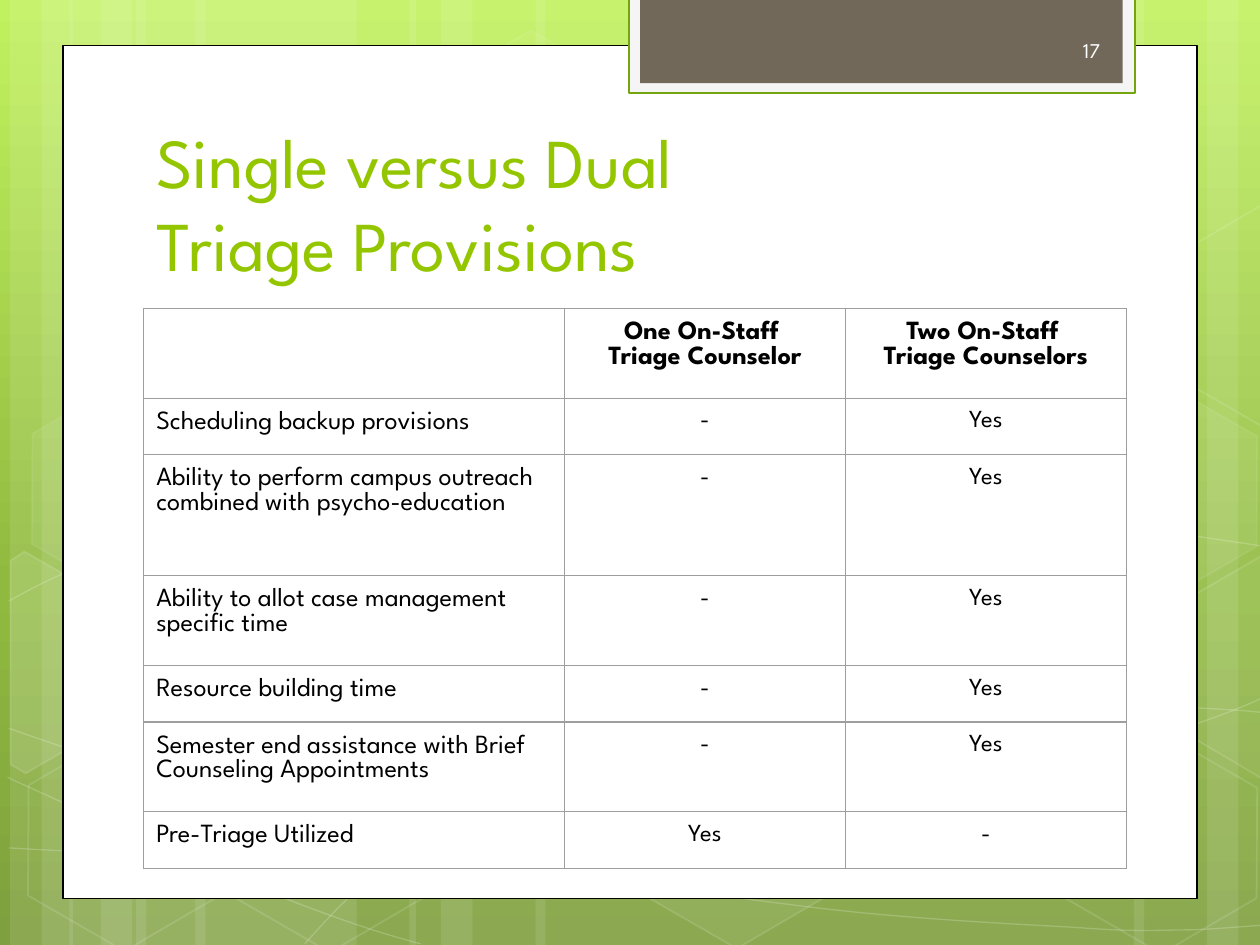
import pptx
import pptx.util
import pptx.dml.color
import pptx.enum.shapes
import pptx.enum.text
import pptx.oxml.ns
import lxml.etree
import copy
import math


class Theme:
    font = "League Spartan"
    sky = [(0, "C1F15E"), (0.62, "90BA3F"), (1, "7FA03E")]
    white, black, lime = "FFFFFF", "000000", "94C600"
    tab, edge, brown, pale = "F5F5F5", "74A50F", "71685A", "FEFEFE"
    grid = "9E9E9E"
    title, head, mark, page = 40, 15, 14, 12


PX = 9144  # 100 px to the inch
RGB = pptx.dml.color.RGBColor.from_string
PT = pptx.util.Pt
QN = pptx.oxml.ns.qn
KIND = pptx.enum.shapes.MSO_SHAPE
ALIGN = pptx.enum.text.PP_ALIGN
ANCHOR = pptx.enum.text.MSO_ANCHOR


def paint(shape, fill=None, line=None, width=1, alphas=()):
    """Fill and outline a shape; alphas are percents for fill, then line."""
    shape.shadow.inherit = False
    if fill:
        shape.fill.solid()
        shape.fill.fore_color.rgb = RGB(fill)
    else:
        shape.fill.background()
    if line:
        shape.line.color.rgb = RGB(line)
        shape.line.width = PT(width)
    else:
        shape.line.fill.background()
    for tint, part in zip(shape.element.spPr.iter(QN("a:srgbClr")), alphas):
        lxml.etree.SubElement(tint, QN("a:alpha"), val=str(part * 1000))


def write(frame, text, size, color, align=ALIGN.LEFT, bold=False):
    frame.text = text
    for para in frame.paragraphs:
        para.alignment = align
        para.font.name = Theme.font
        para.font.size = PT(size)
        para.font.bold = bold
        para.font.color.rgb = RGB(color)


deck = pptx.Presentation()
deck.slide_width, deck.slide_height = 1000 * PX, 750 * PX
slide = deck.slides.add_slide(deck.slide_layouts[5])
shapes = slide.shapes

# Background gradient, top to bottom
back = slide.background.fill
back.gradient()
back.gradient_angle = 270
ramp = next(slide.element.iter(QN("a:gsLst")))
ramp.append(copy.deepcopy(ramp[-1]))
for stop, (place, color) in zip(back.gradient_stops, Theme.sky):
    stop.position = place
    stop.color.rgb = RGB(color)

# Pale upright bands: left, width
bands = [(108, 175), (8, 50), (33, 83), (155, 175), (55, 50), (80, 83),
         (733, 175), (958, 50), (900, 83), (425, 308), (325, 50), (350, 83)]
for left, wide in bands:
    band = shapes.add_shape(KIND.RECTANGLE, left * PX, 0, wide * PX, 750 * PX)
    paint(band, Theme.white, alphas=[10])

# Thin waves: start point, then Bezier pieces of two handles and an end
waves = [
    [(7, 673), (61, 676), (115, 679), (190, 678), (265, 677), (358, 675),
     (458, 665), (558, 655), (700, 636), (792, 617), (883, 598), (977, 568),
     (1007, 551)],
    [(7, 477), (36, 461), (65, 446), (121, 431), (178, 416), (259, 394),
     (347, 387), (436, 380), (544, 379), (654, 387), (764, 395), (947, 426),
     (1007, 434)],
    [(6, 617), (127, 672), (247, 727), (334, 749)],
    [(7, 578), (38, 589), (70, 600), (128, 616), (186, 631), (273, 656),
     (357, 673), (440, 690), (545, 708), (628, 718), (711, 729), (800, 733),
     (853, 736), (905, 740), (919, 738), (945, 738), (971, 737), (989, 735),
     (1007, 734)],
    [(242, 749), (260, 729), (278, 709), (302, 691), (326, 673), (360, 653),
     (388, 639), (416, 625), (433, 619), (470, 609), (506, 599), (573, 585),
     (608, 578), (644, 571), (649, 571), (680, 569), (711, 566), (760, 563),
     (794, 562), (829, 561), (886, 562), (886, 562), (886, 562), (953, 562),
     (953, 562), (971, 563), (988, 564), (997, 565), (1006, 566), (1003, 565),
     (1006, 566)],
]
for dots in waves:
    pen = shapes.build_freeform(*dots[0], scale=PX)
    pen.add_line_segments(dots[1:], close=False)
    wave = pen.convert_to_shape()
    paint(wave, None, Theme.white, 0.75, [20])
    # Join each three points into one curve
    legs = list(wave.element.iter(QN("a:lnTo")))
    for at in range(0, len(legs), 3):
        curve = lxml.etree.Element(QN("a:cubicBezTo"))
        legs[at].addprevious(curve)
        for leg in legs[at:at + 3]:
            curve.append(leg[0])
            leg.getparent().remove(leg)

# Whole hexagons: left, top, fill percent, line percent
cells = [(334, 36, 4, 8), (497, 589, 6, 12), (11, 591, 0, 12),
         (14, 312, 7, 8), (174, 592, 0, 12), (753, 453, 10, 12),
         (834, 593, 0, 12), (834, 314, 7, 8)]
for left, top, tint, edge in cells:
    cell = shapes.add_shape(KIND.HEXAGON, left * PX, top * PX, 175 * PX, 152 * PX)
    cell.adjustments[0], cell.adjustments[1] = 0.285, 1.155
    cell.rotation = 30
    paint(cell, Theme.white if tint else None, Theme.white, 1,
          [tint, edge] if tint else [edge])

# Hexagons cut by the slide edge: fill percent, centre, corners as they stand
cuts = [
    (10, (36, 535), [(8, 445), (19, 438), (96, 482), (95, 570), (20, 614),
                     (8, 607)]),
    (4, (985, 520), [(926, 485), (1001, 441), (1009, 446), (1009, 613),
                     (1002, 617), (926, 573)]),
    (0, (985, 241), [(926, 207), (1001, 163), (1010, 168), (1009, 335),
                     (1002, 339), (926, 295)]),
]
cos, sin = math.cos(math.pi / 6), math.sin(math.pi / 6)
for tint, (mx, my), dots in cuts:
    flat = [(mx + (x - mx) * cos + (y - my) * sin,
             my + (y - my) * cos - (x - mx) * sin) for x, y in dots]
    pen = shapes.build_freeform(*flat[0], scale=PX)
    pen.add_line_segments(flat[1:], close=True)
    cut = pen.convert_to_shape()
    cut.rotation = 30
    paint(cut, Theme.white if tint else None, Theme.white, 1,
          [tint, 12] if tint else [12])

# White card and page tab
panels = [((50, 36, 900, 677), Theme.white, Theme.black, 0.75),
          ((499, -2, 402, 76), Theme.tab, Theme.edge, 1.25),
          ((508, -2, 383, 68), Theme.brown, None, 0)]
for box, fill, line, width in panels:
    panel = shapes.add_shape(KIND.RECTANGLE, *[n * PX for n in box])
    paint(panel, fill, line, width)

# Title, brought in front of the card
title = shapes.title
title.left, title.top, title.width, title.height = [
    n * PX for n in (114, 103, 768, 129)]
title.element.getparent().append(title.element)
frame = title.text_frame
frame.auto_size = pptx.enum.text.MSO_AUTO_SIZE.NONE
frame.vertical_anchor = ANCHOR.BOTTOM
write(frame, "Single versus Dual\nTriage Provisions", Theme.title, Theme.lime)

# Page number
page = shapes.add_textbox(737 * PX, 20 * PX, 146 * PX, 40 * PX).text_frame
page.word_wrap = True
page.vertical_anchor = ANCHOR.MIDDLE
write(page, "17", Theme.page, Theme.pale, ALIGN.RIGHT)

# Table
rows = [
    (71, "", "One On-Staff \nTriage Counselor",
     "Two On-Staff \nTriage Counselors"),
    (45, "Scheduling backup provisions", "-", "Yes"),
    (96, "Ability to perform campus outreach combined with psycho-education",
     "-", "Yes"),
    (71, "Ability to allot case management specific time", "-", "Yes"),
    (45, "Resource building time", "-", "Yes"),
    (71, "Semester end assistance with Brief Counseling Appointments", "-", "Yes"),
    (45, "Pre-Triage Utilized", "Yes", "-"),
]
table = shapes.add_table(len(rows), 3, 114 * PX, 245 * PX,
                         780 * PX, 444 * PX).table
table.first_row = table.horz_banding = False
for col, wide in zip(table.columns, (334, 223, 223)):
    col.width = wide * PX
for r, (high, *texts) in enumerate(rows):
    table.rows[r].height = high * PX
    for c, text in enumerate(texts):
        cell = table.cell(r, c)
        cell.margin_left = cell.margin_right = 10 * PX
        cell.margin_top = cell.margin_bottom = 10 * PX
        size = Theme.mark if r and c else Theme.head
        write(cell.text_frame, text, size, Theme.black,
              ALIGN.CENTER if c else ALIGN.LEFT, bold=r == 0)
        props = cell._tc.get_or_add_tcPr()
        for side in ("a:lnL", "a:lnR", "a:lnT", "a:lnB"):
            rule = lxml.etree.SubElement(props, QN(side), w=str(PT(0.75)))
            ink = lxml.etree.SubElement(rule, QN("a:solidFill"))
            lxml.etree.SubElement(ink, QN("a:srgbClr"), val=Theme.grid)
        cell.fill.background()

deck.save("out.pptx")
